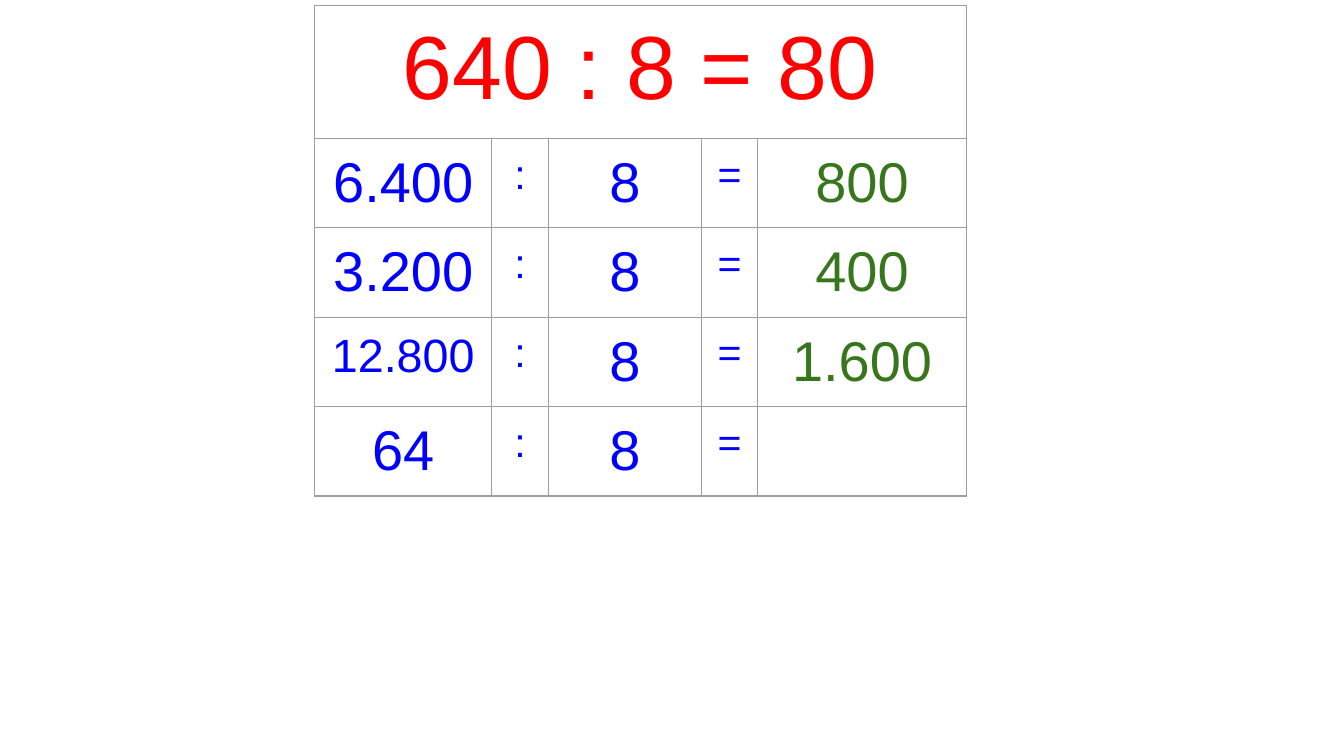
import dataclasses

import pptx
import pptx.dml.color
import pptx.enum.text
import pptx.oxml
import pptx.oxml.ns
import pptx.table
import pptx.util

RED = pptx.dml.color.RGBColor(0xFF, 0x00, 0x00)
BLUE = pptx.dml.color.RGBColor(0x00, 0x00, 0xFF)
GREEN = pptx.dml.color.RGBColor(0x38, 0x76, 0x1D)
GREY = pptx.dml.color.RGBColor(0x9E, 0x9E, 0x9E)

WIDE = 10
HIGH = WIDE * 9 / 16
LEFT, TOP = 0.234 * WIDE, 0.04
COLS = [1.32, 0.42, 1.14, 0.42, 1.55]
HEAD, ROW = 0.99, 0.6
INSET = pptx.util.Inches(0.1)


@dataclasses.dataclass
class Sum:
    total: str
    answer: str
    size: float = 30


SUMS = [
    Sum("6.400", "800"),
    Sum("3.200", "400"),
    Sum("12.800", "1.600", 25),
    Sum("64", ""),
]


def frame(cell: pptx.table._Cell) -> None:
    cell.fill.background()
    props = cell._tc.get_or_add_tcPr()
    for place, side in enumerate("LRTB"):
        line = pptx.oxml.parse_xml(
            f'<a:ln{side} {pptx.oxml.ns.nsdecls("a")} w="{pptx.util.Pt(0.75)}">'
            f'<a:solidFill><a:srgbClr val="{GREY}"/></a:solidFill></a:ln{side}>'
        )
        props.insert(place, line)
    cell.margin_left = cell.margin_right = INSET
    cell.margin_top = cell.margin_bottom = INSET


def write(cell: pptx.table._Cell, text: str, size: float,
          color: pptx.dml.color.RGBColor) -> None:
    cell.text_frame.text = text
    para = cell.text_frame.paragraphs[0]
    para.alignment = pptx.enum.text.PP_ALIGN.CENTER
    for run in para.runs:
        run.font.name = "Arial"
        run.font.size = pptx.util.Pt(size)
        run.font.color.rgb = color


def build() -> None:
    deck = pptx.Presentation()
    deck.slide_width = pptx.util.Inches(WIDE)
    deck.slide_height = pptx.util.Inches(HIGH)
    slide = deck.slides.add_slide(deck.slide_layouts[6])
    rows = [HEAD] + [ROW] * len(SUMS)
    box = [pptx.util.Inches(x) for x in (LEFT, TOP, sum(COLS), sum(rows))]
    table = slide.shapes.add_table(len(rows), len(COLS), *box).table
    table.first_row = table.horz_banding = False
    for col, width in zip(table.columns, COLS):
        col.width = pptx.util.Inches(width)
    for row, height in zip(table.rows, rows):
        row.height = pptx.util.Inches(height)
    for cell in table.iter_cells():
        frame(cell)

    table.cell(0, 0).merge(table.cell(0, len(COLS) - 1))
    write(table.cell(0, 0), "640 : 8 = 80", 48, RED)
    for row, item in enumerate(SUMS, 1):
        parts = [
            (item.total, item.size, BLUE),
            (":", 22, BLUE),
            ("8", 30, BLUE),
            ("=", 22, BLUE),
            (item.answer, 30, GREEN),
        ]
        for col, part in enumerate(parts):
            write(table.cell(row, col), *part)
    deck.save("out.pptx")


if __name__ == "__main__":
    build()
